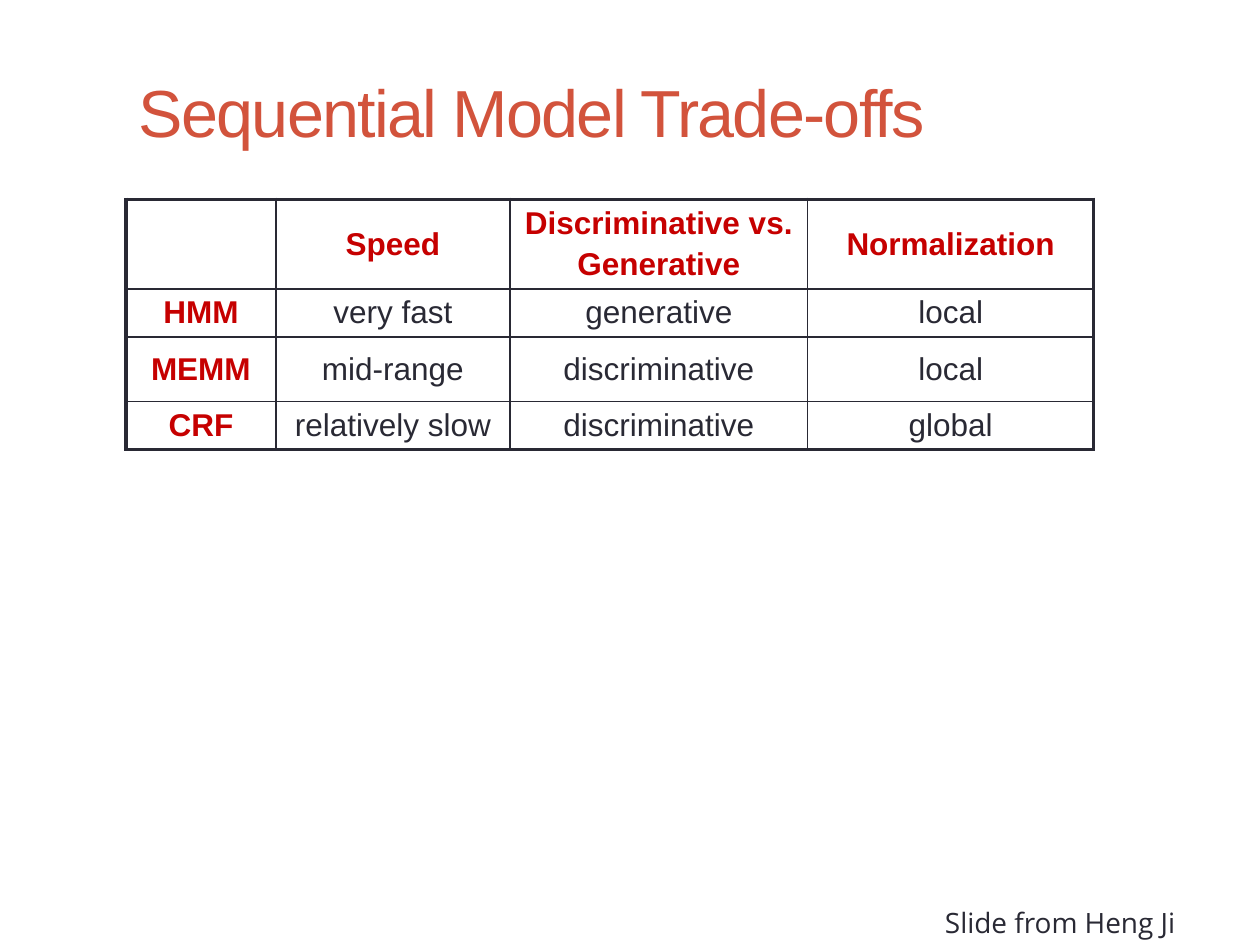
from dataclasses import dataclass

from lxml import etree
from pptx import Presentation
from pptx import util as u
from pptx.dml.color import RGBColor
from pptx.enum import text
from pptx.oxml import ns


@dataclass(frozen=True)
class Theme:
    ink: str = "292934"
    heading: str = "D2533C"
    label: str = "C60000"
    face: str = "Arial"
    credit_face: str = "Open Sans"
    title_size: float = 38
    cell_size: float = 18
    credit_size: float = 16
    outer_line: float = 2.25
    inner_line: float = 1


theme = Theme()


def add_run(paragraph, words, size, color, face=theme.face, bold=False):
    run = paragraph.add_run()
    run.text = words
    run.font.size = u.Pt(size)
    run.font.color.rgb = RGBColor.from_string(color)
    run.font.name = face
    run.font.bold = bold
    return run


def add_border(cell, side, width):
    line = etree.SubElement(cell._tc.get_or_add_tcPr(), ns.qn(f"a:ln{side}"), w=str(u.Pt(width)))
    fill = etree.SubElement(line, ns.qn("a:solidFill"))
    etree.SubElement(fill, ns.qn("a:srgbClr"), val=theme.ink)


prs = Presentation()
prs.slide_width, prs.slide_height = u.Cm(25.4), u.Cm(19.05)
slide = prs.slides.add_slide(prs.slide_layouts[5])

title = slide.shapes.title
title.left, title.top, title.width, title.height = u.Cm(2.54), u.Cm(0.64), u.Cm(22.86), u.Cm(3.18)
title.text_frame.vertical_anchor = text.MSO_ANCHOR.MIDDLE
heading = title.text_frame.paragraphs[0]
heading.alignment = text.PP_ALIGN.LEFT
heading_run = add_run(heading, "Sequential Model Trade-offs", theme.title_size, theme.heading)
heading_run.font._element.set("spc", "-100")

models = [
    ["", "Speed", "Discriminative vs. \nGenerative", "Normalization"],
    ["HMM", "very fast", "generative", "local"],
    ["MEMM", "mid-range", "discriminative", "local"],
    ["CRF", "relatively slow", "discriminative", "global"],
]
column_widths = [3.02, 4.72, 6, 5.77]
row_heights = [1.8, 0.97, 1.3, 0.97]
last_row, last_column = len(row_heights) - 1, len(column_widths) - 1

comparison = slide.shapes.add_table(
    len(row_heights), len(column_widths), u.Cm(2.54), u.Cm(4.02),
    u.Cm(sum(column_widths)), u.Cm(sum(row_heights))).table
comparison.first_row = comparison.horz_banding = False
for column, width in zip(comparison.columns, column_widths):
    column.width = u.Cm(width)
for row, height in zip(comparison.rows, row_heights):
    row.height = u.Cm(height)

for r, entries in enumerate(models):
    for c, entry in enumerate(entries):
        cell = comparison.cell(r, c)
        cell.vertical_anchor = text.MSO_ANCHOR.MIDDLE
        edges = {"L": c == 0, "R": c == last_column, "T": r == 0, "B": r == last_row}
        for side, outer in edges.items():
            add_border(cell, side, theme.outer_line if outer else theme.inner_line)
        cell.fill.background()
        is_label = r == 0 or c == 0
        for i, words in enumerate(entry.split("\n")):
            frame = cell.text_frame
            paragraph = frame.add_paragraph() if i else frame.paragraphs[0]
            paragraph.alignment = text.PP_ALIGN.CENTER
            paragraph.space_before = u.Pt(0.2 * theme.cell_size)
            if words:
                add_run(paragraph, words, theme.cell_size,
                        theme.label if is_label else theme.ink, bold=is_label)

credit = slide.shapes.add_textbox(u.Cm(18.8), u.Cm(18.14), u.Cm(5.49), u.Cm(0.94)).text_frame
credit.word_wrap = False
credit.auto_size = text.MSO_AUTO_SIZE.SHAPE_TO_FIT_TEXT
add_run(credit.paragraphs[0], "Slide from Heng Ji", theme.credit_size, theme.ink, theme.credit_face)

prs.save("out.pptx")
